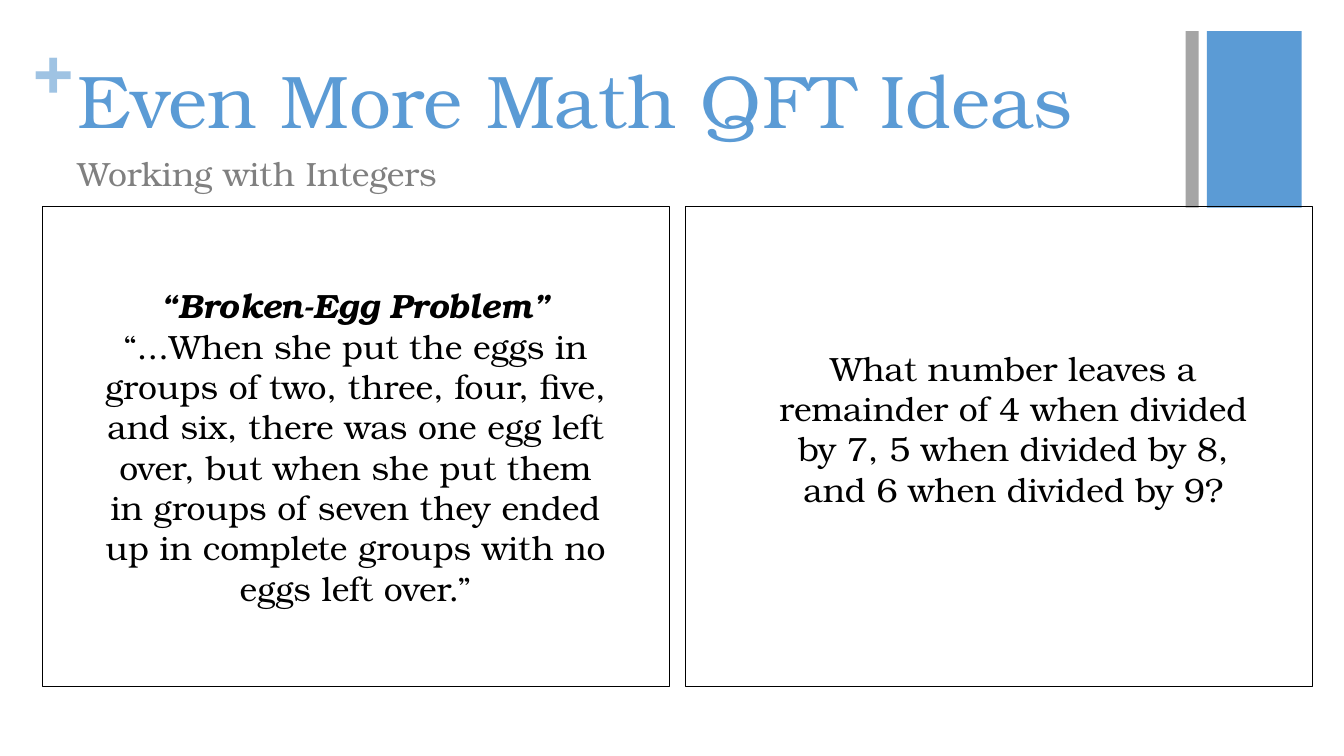
from dataclasses import dataclass

from pptx import Presentation
from pptx.dml.color import RGBColor
from pptx.enum.shapes import MSO_SHAPE
from pptx.enum.text import MSO_ANCHOR, PP_ALIGN
from pptx.util import Inches, Pt

RECT = MSO_SHAPE.RECTANGLE
TOP, BOTTOM = MSO_ANCHOR.TOP, MSO_ANCHOR.BOTTOM
LEFT, CENTER = PP_ALIGN.LEFT, PP_ALIGN.CENTER


@dataclass(frozen=True)
class Theme:
    font: str = "TeX Gyre Bonum"
    blue: str = "5B9BD5"
    pale_blue: str = "9FC3E3"
    bar_gray: str = "A5A5A5"
    text_gray: str = "808080"
    black: str = "000000"
    title_size: float = 53.3
    plus_size: float = 48
    body_size: float = 24
    border: float = 0.75


THEME = Theme()
WIDTH, HEIGHT = 13.33, 7.5
PAD = 0.13

EGG_PROBLEM = [
    ("“Broken-Egg Problem”", {"bold": True, "italic": True}),
    ("“...When she put the eggs in groups of two, three, four, five, and six, "
     "there was one egg left over, but when she put them in groups of seven "
     "they ended up in complete groups with no eggs left over.”", {}),
]
REMAINDER_PROBLEM = [
    ("What number leaves a remainder of 4 when divided by 7, 5 when divided "
     "by 8, and 6 when divided by 9?", {}),
]


def add_rect(s, box, fill=None, line=None):
    sp = s.shapes.add_shape(RECT, *map(Inches, box))
    sp.shadow.inherit = False
    if fill:
        sp.fill.solid()
        sp.fill.fore_color.rgb = RGBColor.from_string(fill)
    else:
        sp.fill.background()
    if line:
        sp.line.color.rgb = RGBColor.from_string(line)
        sp.line.width = Pt(THEME.border)
    else:
        sp.line.fill.background()


def add_text(s, box, paragraphs, size, color, insets=(PAD,) * 4,
             anchor=TOP, align=LEFT, spacing=1.0):
    """Add (text, font format) paragraphs; insets run left, top, right, bottom."""
    tf = s.shapes.add_textbox(*map(Inches, box)).text_frame
    tf.word_wrap = True
    tf.vertical_anchor = anchor
    for side, inset in zip(("left", "top", "right", "bottom"), insets):
        setattr(tf, f"margin_{side}", Inches(inset))
    for i, (text, extra) in enumerate(paragraphs):
        p = tf.add_paragraph() if i else tf.paragraphs[0]
        p.alignment, p.line_spacing = align, spacing
        r = p.add_run()
        r.text = text
        font = {"name": THEME.font, "size": Pt(size), "bold": False, "italic": False}
        for name, value in (font | extra).items():
            setattr(r.font, name, value)
        r.font.color.rgb = RGBColor.from_string(color)


def add_corner_bars(s, box):
    """Fill the box with a thin gray bar, a gap and a wide blue bar."""
    x, y, w, h = box
    thin, wide = 0.13, 0.94
    add_rect(s, (x + w - wide, y, wide, h), THEME.blue)
    add_rect(s, (x, y, thin, h), THEME.bar_gray)


def add_heading(s, box, title, subtitle):
    x, y, w, h = box
    add_text(s, (x - 0.31, y - 0.32, 0.38, 0.61), [("+", {"bold": True})],
             THEME.plus_size, THEME.pale_blue, (0,) * 4)
    add_text(s, (x, y, w, 1.22), [(title, {})], THEME.title_size, THEME.blue,
             (PAD, 0.07, PAD, 0.07), spacing=0.9)
    add_text(s, (x, y + h - 0.65, 4.03, 0.65), [(subtitle, {})],
             THEME.body_size, THEME.text_gray, (PAD, 0, PAD, PAD), BOTTOM,
             spacing=0.9)


def add_problem(s, box, text_area, paragraphs):
    """Draw a bordered panel; text_area is offset and size inside it."""
    x, y, w, h = box
    dx, dy, text_w, text_h = text_area
    add_rect(s, box, line=THEME.black)
    add_text(s, (x + dx, y + dy, text_w, text_h), paragraphs,
             THEME.body_size, THEME.black, align=CENTER)


def add_problem_columns(s, box, gap, problems):
    x, y, w, h = box
    column = (w - gap * (len(problems) - 1)) / len(problems)
    for i, (text_area, paragraphs) in enumerate(problems):
        add_problem(s, (x + i * (column + gap), y, column, h), text_area, paragraphs)


def main():
    prs = Presentation()
    prs.slide_width, prs.slide_height = Inches(WIDTH), Inches(HEIGHT)
    s = prs.slides.add_slide(prs.slide_layouts[6])
    add_corner_bars(s, (11.76, 0.31, 1.15, 1.75))
    add_heading(s, (0.64, 0.57, 11.02, 1.48),
                "Even More Math QFT Ideas", "Working with Integers")
    add_problem_columns(s, (0.42, 2.05, 12.6, 4.76), 0.16, [
        ((0.48, 0.65, 5.25, 3.42), EGG_PROBLEM),
        ((0.72, 1.27, 5.06, 1.9), REMAINDER_PROBLEM),
    ])
    prs.save("out.pptx")


if __name__ == "__main__":
    main()
